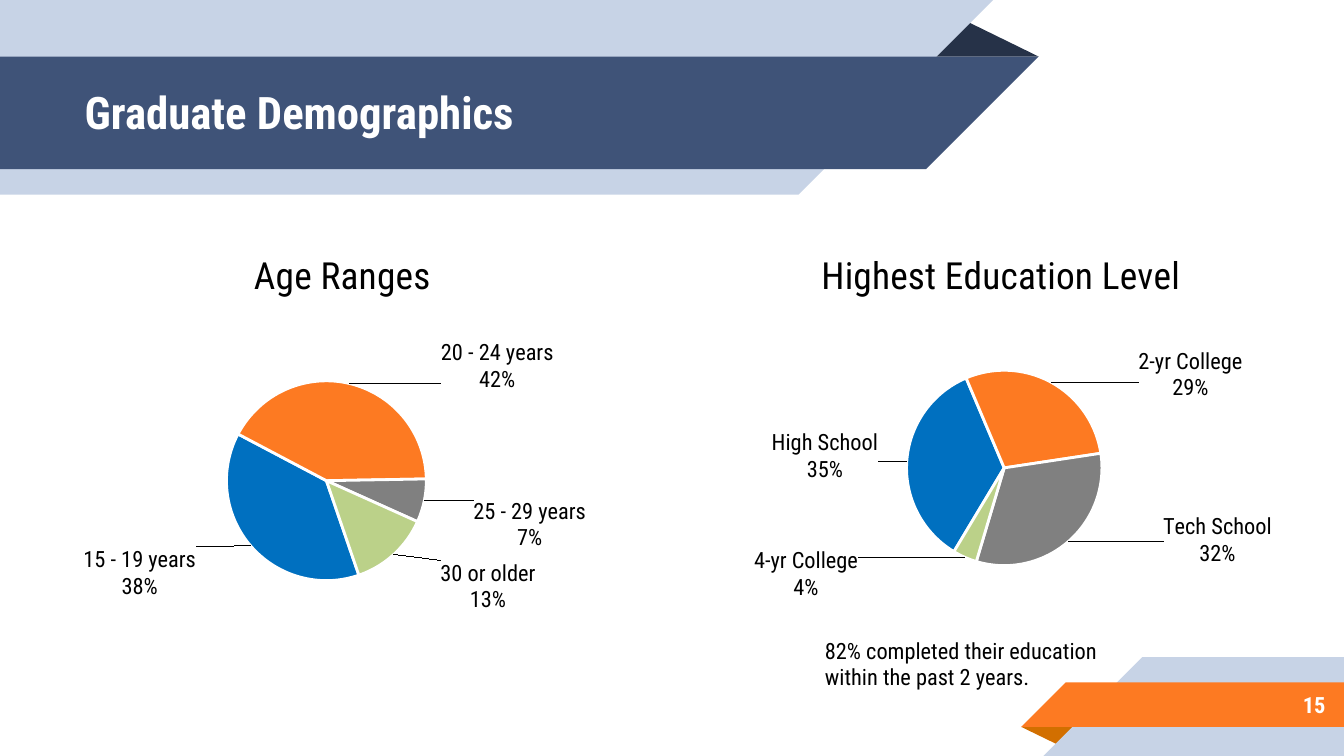
import pptx
import pptx.chart.data
import pptx.dml.color
import pptx.enum.chart
import pptx.enum.text
import pptx.oxml
import pptx.oxml.ns
import pptx.util
from pptx.util import Cm

NAVY, PALE, ORANGE, WHITE, BLACK = "3F5378", "C7D3E6", "FD7A22", "FFFFFF", "000000"
SLICE_COLORS = ["0070C0", ORANGE, "808080", "BBD189"]
CHART_NS = pptx.oxml.ns.nsdecls("c")
SLIDE_WIDTH, SLIDE_HEIGHT = 25.4, 14.29


def rgb(hex_color):
    return pptx.dml.color.RGBColor.from_string(hex_color)


def manual_layout(x, y, width=None, height=None):
    """Chart layout in fractions; without a size, an offset or a position."""
    parts = ""
    if width:
        parts = '<c:layoutTarget val="inner"/>'
    if width or height is not None:
        parts += '<c:xMode val="edge"/><c:yMode val="edge"/>'
    parts += f'<c:x val="{x}"/><c:y val="{y}"/>'
    if width:
        parts += f'<c:w val="{width}"/><c:h val="{height}"/>'
    return f"<c:layout {CHART_NS}><c:manualLayout>{parts}</c:manualLayout></c:layout>"


def set_layout(parent, index, layout):
    for old in parent.findall(pptx.oxml.ns.qn("c:layout")):
        parent.remove(old)
    parent.insert(index, pptx.oxml.parse_xml(layout))


class Deck:
    font_name = "Roboto Condensed"

    def __init__(self, slide):
        self.slide = slide

    def style(self, font, size, color, bold=False):
        font.name, font.size, font.bold = self.font_name, pptx.util.Pt(size), bold
        font.color.rgb = rgb(color)

    def polygon(self, points, color):
        corners = [(Cm(x), Cm(y)) for x, y in points]
        builder = self.slide.shapes.build_freeform(*corners[0])
        builder.add_line_segments(corners[1:], close=True)
        shape = builder.convert_to_shape()
        shape.shadow.inherit = False
        shape.fill.solid()
        shape.fill.fore_color.rgb = rgb(color)
        shape.line.fill.background()

    def band(self, outer, tip, top, bottom, color):
        """Ribbon from a slide edge to a tip cut at 45 degrees."""
        cut = tip - (bottom - top)
        self.polygon([(outer, top), (tip, top), (cut, bottom), (outer, bottom)], color)

    def text(self, words, box, size, color, bold=False, align=None, inset=None):
        frame = self.slide.shapes.add_textbox(*map(Cm, box)).text_frame
        frame.word_wrap = True
        if inset:
            frame.vertical_anchor = pptx.enum.text.MSO_ANCHOR.MIDDLE
            frame.margin_top = frame.margin_bottom = Cm(inset)
            frame.margin_left = frame.margin_right = Cm(inset)
        paragraph = frame.paragraphs[0]
        paragraph.text = words
        paragraph.alignment = align
        self.style(paragraph.font, size, color, bold)

    def pie(self, title, title_at, left, shares, start, plot, label_offsets):
        data = pptx.chart.data.CategoryChartData()
        data.categories = shares.keys()
        data.add_series(title, shares.values())
        chart = self.slide.shapes.add_chart(
            pptx.enum.chart.XL_CHART_TYPE.PIE,
            Cm(left), Cm(4.11), Cm(13.03), Cm(8.03), data).chart
        chart.has_legend = False
        chart.font.name, chart.font.size = "Arial", pptx.util.Pt(10)
        chart.font.color.rgb = rgb(BLACK)

        # Heading
        heading = chart.chart_title.text_frame.paragraphs[0]
        heading.text = title
        self.style(heading.font, 20, BLACK)
        set_layout(chart.chart_title.element, 1, manual_layout(*title_at, None, 0))

        # Pie position and rotation
        plot_area = chart.element.chart.plotArea
        set_layout(plot_area, 0, manual_layout(*plot))
        pie = plot_area.find(pptx.oxml.ns.qn("c:pieChart"))
        for old in pie.findall(pptx.oxml.ns.qn("c:firstSliceAng")):
            pie.remove(old)
        pie.append(pptx.oxml.parse_xml(f'<c:firstSliceAng {CHART_NS} val="{start}"/>'))
        chart.plots[0].vary_by_categories = True

        # Slices and their labels
        series = chart.plots[0].series[0]
        labels = series.data_labels
        labels.show_percentage = labels.show_category_name = True
        labels.show_value = False
        labels.number_format, labels.number_format_is_linked = "0%", False
        labels.position = pptx.enum.chart.XL_LABEL_POSITION.OUTSIDE_END
        self.style(labels.font, 12, BLACK)
        for index, (color, offset) in enumerate(zip(SLICE_COLORS, label_offsets)):
            point = series.points[index]
            point.format.fill.solid()
            point.format.fill.fore_color.rgb = rgb(color)
            point.format.line.color.rgb = rgb(WHITE)
            point.format.line.width = pptx.util.Pt(1.5)
            label = pptx.oxml.parse_xml(
                f'<c:dLbl {CHART_NS}><c:idx val="{index}"/>{manual_layout(*offset)}'
                '<c:numFmt formatCode="0%" sourceLinked="0"/>'
                '<c:dLblPos val="outEnd"/><c:showLegendKey val="0"/>'
                '<c:showVal val="0"/><c:showCatName val="1"/><c:showSerName val="0"/>'
                '<c:showPercent val="1"/><c:showBubbleSize val="0"/>'
                '<c:separator>\n</c:separator></c:dLbl>')
            series.points[index].data_label  # label belongs to this slice
            labels._element.insert(index, label)
            self.style(point.data_label.font, 12, BLACK)


def main():
    presentation = pptx.Presentation()
    presentation.slide_width, presentation.slide_height = Cm(SLIDE_WIDTH), Cm(SLIDE_HEIGHT)
    deck = Deck(presentation.slides.add_slide(presentation.slide_layouts[6]))

    # Title ribbon
    deck.polygon([(17.48, 1.07), (18.18, 0.36), (19.63, 1.07)], "263248")
    deck.band(0, 18.77, 0, 3.68, PALE)
    deck.band(0, 19.63, 1.07, 3.2, NAVY)
    deck.text("Graduate Demographics", (1.35, 1.04, 14.6, 2.13), 24, WHITE,
              bold=True, inset=0.25)

    # Page number ribbon
    deck.polygon([(19.3, 13.74), (20.4, 13.74), (20.04, 14.1)], "D26F00")
    deck.band(SLIDE_WIDTH, 21.59, 12.42, SLIDE_HEIGHT, PALE)
    deck.band(SLIDE_WIDTH, 20.14, 12.9, 13.74, ORANGE)
    deck.text("15", (21.16, 12.88, 4.14, 0.89), 12, WHITE, bold=True,
              align=pptx.enum.text.PP_ALIGN.RIGHT, inset=0.25)

    # Demographic charts
    deck.pie("Age Ranges", (0.37, 0.06), -0.15,
             {"15 - 19 years": 38, "20 - 24 years": 42,
              "25 - 29 years": 7, "30 or older": 13},
             161, (0.34, 0.38, 0.29, 0.48),
             [(-0.07, -0.01), (0.13, 0.04), (0.06, -0.01), (0.06, 0)])
    deck.pie("Highest Education Level", (0.24, 0.06), 12.27,
             {"High School": 35, "2-yr College": 29,
              "Tech School": 32, "4-yr College": 4},
             211, (0.37, 0.36, 0.29, 0.46),
             [(-0.03, -0.01), (0.12, 0.06), (0.13, -0.08), (-0.15, -0.04)])

    # Closing remark
    deck.text("82% completed their education\vwithin the past 2 years.",
              (15.34, 11.91, 6.83, 1.27), 12, BLACK)

    presentation.save("out.pptx")


if __name__ == "__main__":
    main()
